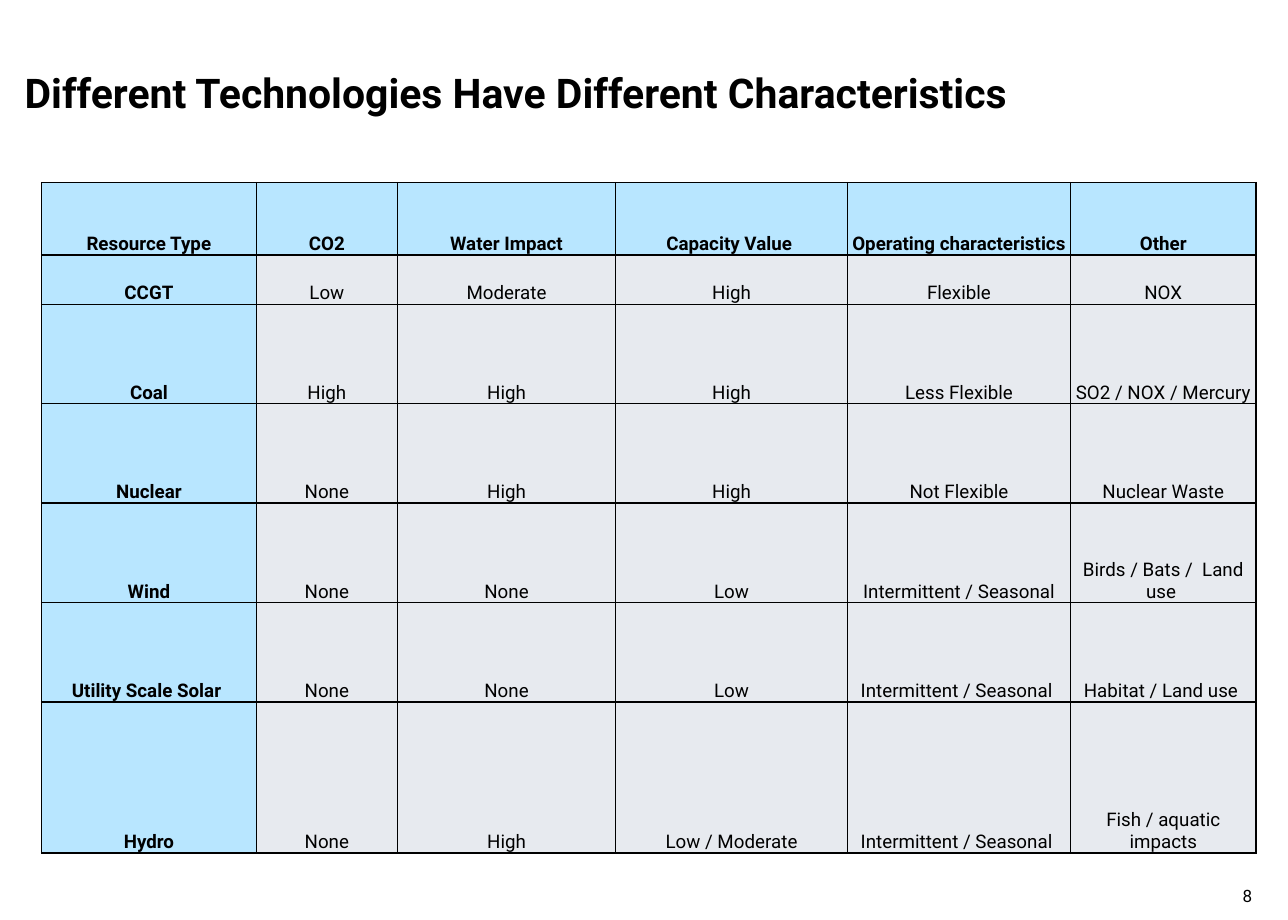
from dataclasses import dataclass

from lxml import etree
from pptx import Presentation
from pptx import util as u
from pptx.dml.color import RGBColor
from pptx.enum import shapes, text
from pptx.oxml import ns

TITLE = "Different Technologies Have Different Characteristics"
PAGE_NUMBER = "8"
RESOURCES = [
    ("Resource Type", "CO2", "Water Impact", "Capacity Value ", "Operating characteristics", "Other"),
    ("CCGT", "Low", "Moderate", "High", "Flexible", "NOX"),
    ("Coal", "High", "High", "High", "Less Flexible", "SO2 / NOX / Mercury"),
    ("Nuclear", "None", "High", "High", "Not Flexible", "Nuclear Waste"),
    ("Wind", "None", "None", "Low", "Intermittent / Seasonal", "Birds / Bats /  Land use "),
    ("Utility Scale Solar ", "None", "None", "Low", "Intermittent / Seasonal ", "Habitat / Land use "),
    ("Hydro", "None", "High", "Low / Moderate", "Intermittent / Seasonal ", "Fish / aquatic impacts"),
]
COLUMN_WIDTHS = (4.45, 2.92, 4.52, 4.8, 4.62, 3.84)
ROW_HEIGHTS = (1.5, 1.02, 2.06, 2.06, 2.06, 2.06, 3.12)


@dataclass(frozen=True)
class Theme:
    font: str = "Roboto"
    ink: str = "000000"
    paper: str = "FFFFFF"
    heading: str = "B8E6FF"
    body: str = "E7EAEF"
    title_size: int = 24
    table_size: int = 11
    number_size: int = 10
    border: int = 1


THEME = Theme()


def write(paragraph, words, size, alignment, bold=False):
    paragraph.alignment = alignment
    run = paragraph.add_run()
    run.text = words
    run.font.name = THEME.font
    run.font.size = u.Pt(size)
    run.font.bold = bold
    run.font.color.rgb = RGBColor.from_string(THEME.ink)


def paint(fill, color):
    fill.solid()
    fill.fore_color.rgb = RGBColor.from_string(color)


def add_borders(cell):
    properties = cell._tc.get_or_add_tcPr()
    for side in ("a:lnL", "a:lnR", "a:lnT", "a:lnB"):
        line = etree.SubElement(properties, ns.qn(side), w=str(u.Pt(THEME.border)))
        fill = etree.SubElement(line, ns.qn("a:solidFill"))
        etree.SubElement(fill, ns.qn("a:srgbClr"), val=THEME.ink)


def add_title(slide):
    title = slide.shapes.title
    title.left, title.top, title.width, title.height = map(u.Cm, (0.51, 0.76, 22.86, 2.31))
    frame = title.text_frame
    frame.margin_left = frame.margin_right = 0
    frame.vertical_anchor = text.MSO_ANCHOR.MIDDLE
    write(frame.paragraphs[0], TITLE, THEME.title_size, text.PP_ALIGN.LEFT, True)


def add_resource_table(slide):
    table = slide.shapes.add_table(
        len(ROW_HEIGHTS), len(COLUMN_WIDTHS), u.Cm(0.86), u.Cm(3.78),
        u.Cm(sum(COLUMN_WIDTHS)), u.Cm(sum(ROW_HEIGHTS))).table
    for column, width in zip(table.columns, COLUMN_WIDTHS):
        column.width = u.Cm(width)
    for row, height in zip(table.rows, ROW_HEIGHTS):
        row.height = u.Cm(height)
    for row_index, resource in enumerate(RESOURCES):
        for column_index, words in enumerate(resource):
            cell = table.cell(row_index, column_index)
            is_heading = row_index == 0 or column_index == 0
            cell.margin_left = cell.margin_right = cell.margin_top = u.Cm(0.03)
            cell.margin_bottom = 0
            cell.vertical_anchor = text.MSO_ANCHOR.BOTTOM
            add_borders(cell)
            paint(cell.fill, THEME.heading if is_heading else THEME.body)
            write(cell.text_frame.paragraphs[0], words, THEME.table_size,
                  text.PP_ALIGN.CENTER, is_heading)


def add_page_number(slide):
    box = slide.shapes.add_shape(
        shapes.MSO_SHAPE.RECTANGLE, *map(u.Cm, (23.06, 18.21, 3.12, 0.76)))
    box.shadow.inherit = False
    paint(box.fill, THEME.paper)
    box.line.fill.background()
    box.text_frame.vertical_anchor = text.MSO_ANCHOR.TOP
    write(box.text_frame.paragraphs[0], PAGE_NUMBER, THEME.number_size, text.PP_ALIGN.RIGHT)


def main():
    presentation = Presentation()
    presentation.slide_width = u.Cm(26.67)
    presentation.slide_height = u.Cm(19.05)
    slide = presentation.slides.add_slide(presentation.slide_layouts.get_by_name("Title Only"))
    add_title(slide)
    add_resource_table(slide)
    add_page_number(slide)
    presentation.save("out.pptx")


if __name__ == "__main__":
    main()
